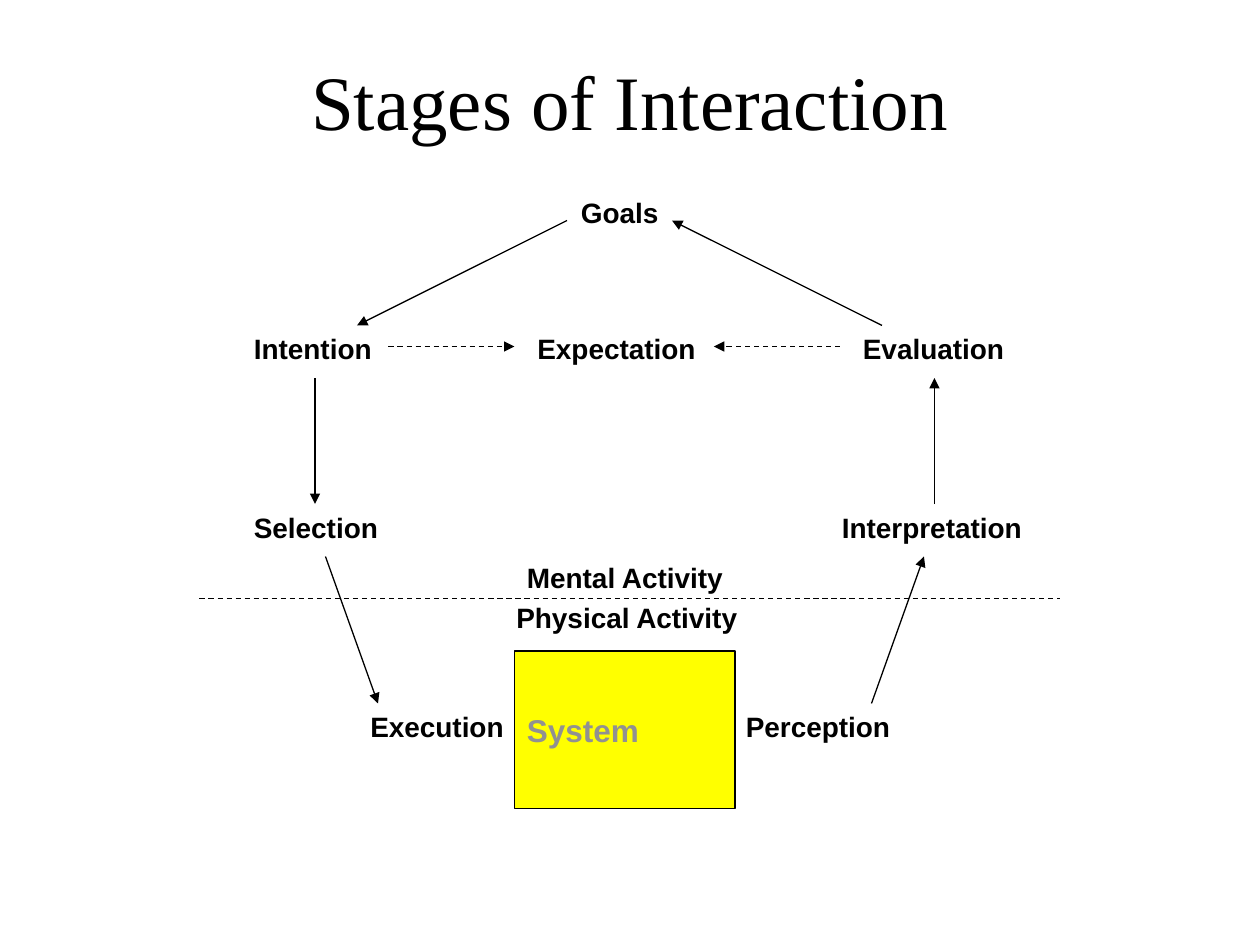
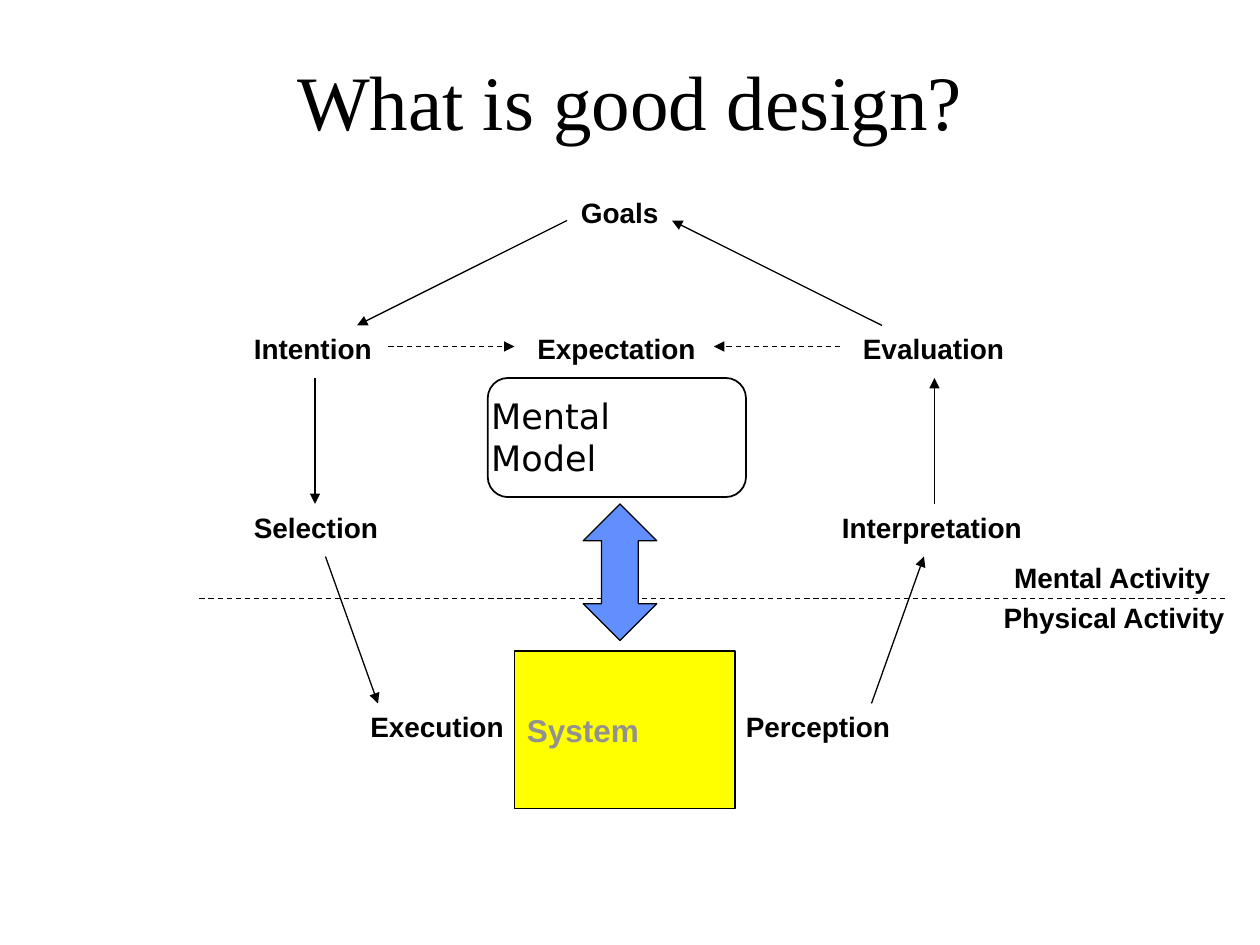
"""Build two slides on the stages of interaction, on a grid of 120 columns by 90 rows."""
import pptx
import pptx.util
import pptx.dml.color
import pptx.enum.dml
import pptx.enum.shapes
import pptx.enum.text
import pptx.oxml
import pptx.oxml.ns

BLACK = pptx.dml.color.RGBColor(0x00, 0x00, 0x00)
GREY = pptx.dml.color.RGBColor(0x91, 0x91, 0x91)
YELLOW = pptx.dml.color.RGBColor(0xFF, 0xFF, 0x00)
BLUE = pptx.dml.color.RGBColor(0x61, 0x8F, 0xFD)
KIND = pptx.enum.shapes.MSO_SHAPE
ALIGN = pptx.enum.text.PP_ALIGN
FIT = pptx.enum.text.MSO_AUTO_SIZE
MIDDLE = pptx.enum.text.MSO_ANCHOR.MIDDLE
DASH = pptx.enum.dml.MSO_LINE.DASH
TALL = 4.4

LABELS = [
    ("Goals", 54.15, 18, 9.9),
    ("Intention", 23, 31, 13.8),
    ("Expectation", 50, 31, 17.6),
    ("Evaluation", 81, 31, 16.2),
    ("Selection", 23, 48, 14.4),
    ("Interpretation", 79, 48, 19.8),
    ("Perception", 69.85, 67, 17.2),
]
ARROWS = [
    (54, 21, 34, 31), (84, 31, 64, 21),
    (30, 36, 30, 48), (89, 48, 89, 36),
    (31, 53, 36, 67), (83, 67, 88, 53),
]
HINTS = [(37, 33, 49, 33), (80, 33, 68, 33)]
SLIDES = [
    ("Stages of Interaction", 101, 0),
    ("What is good design?", 117, 46.4),
]


def grid(*cells):
    return [pptx.util.Inches(cell / 12) for cell in cells]


def write(frame, text, font="Arial", size=16, color=BLACK, bold=True,
          align=ALIGN.LEFT, wrap=False, fit=FIT.SHAPE_TO_FIT_TEXT, anchor=None):
    frame.text = text
    frame.word_wrap = wrap
    frame.auto_size = fit
    if anchor is not None:
        frame.vertical_anchor = anchor
    for para in frame.paragraphs:
        para.alignment = align
        for run in para.runs:
            run.font.name = font
            run.font.size = pptx.util.Pt(size)
            run.font.bold = bold
            run.font.color.rgb = color


deck = pptx.Presentation()
deck.slide_width, deck.slide_height = grid(120, 90)

for title, end, shift in SLIDES:
    slide = deck.slides.add_slide(deck.slide_layouts[5])
    shapes = slide.shapes
    head = shapes.title
    head.left, head.top, head.width, head.height = grid(9, 2, 102, 15)
    write(head.text_frame, title, font="Times New Roman", size=44, bold=False,
          align=ALIGN.CENTER, wrap=True, fit=FIT.NONE, anchor=MIDDLE)

    zones = [("Mental Activity", 49 + shift, 52.8, 21.3),
             ("Physical Activity", 48 + shift, 56.6, 23.7)]
    for text, left, top, width in LABELS + zones:
        label = shapes.add_textbox(*grid(left, top, width, TALL))
        write(label.text_frame, text)
    label = shapes.add_textbox(*grid(34, 67, 15.15, TALL))
    write(label.text_frame, "Execution", align=ALIGN.RIGHT, wrap=True)

    blocks = [(KIND.RECTANGLE, (49, 62, 21, 15), YELLOW, 0.75, ())]
    border = (19, 57, end, 57)
    for ends in ARROWS + HINTS + [border]:
        line = shapes.add_connector(
            pptx.enum.shapes.MSO_CONNECTOR.STRAIGHT, *grid(*ends))
        line.line.color.rgb = BLACK
        line.line.width = pptx.util.Pt(0.75)
        if ends not in ARROWS:
            line.line.dash_style = DASH
        props = line.element.spPr
        if ends != border:
            tip = pptx.oxml.ns.qn("a:tailEnd")
            props.find(pptx.oxml.ns.qn("a:ln")).append(
                props.makeelement(tip, {"type": "triangle"}))
        props.append(props.makeelement(pptx.oxml.ns.qn("a:effectLst"), {}))

    if shift:
        blocks += [
            (KIND.ROUNDED_RECTANGLE, (46.45, 36, 24.6, 11.35), None, 1, (0.17,)),
            (KIND.UP_DOWN_ARROW, (55.55, 48, 7, 13), BLUE, 0.75, (0.37, 0.5)),
        ]
    for kind, cells, fill, weight, bends in blocks:
        block = shapes.add_shape(kind, *grid(*cells))
        block.shadow.inherit = False
        block.line.color.rgb = BLACK
        block.line.width = pptx.util.Pt(weight)
        for spot, bend in enumerate(bends):
            block.adjustments[spot] = bend
        if fill is None:
            block.fill.background()
        else:
            block.fill.solid()
            block.fill.fore_color.rgb = fill
        if kind == KIND.RECTANGLE:
            write(block.text_frame, "System", size=18, color=GREY,
                  fit=FIT.NONE, anchor=MIDDLE)

    if shift:
        model = shapes.add_textbox(*grid(45.6, 37, 26.4, 9.2))
        write(model.text_frame, "Mental\nModel", font="DejaVu Sans", size=20,
              bold=False, wrap=True)

deck.save("out.pptx")
